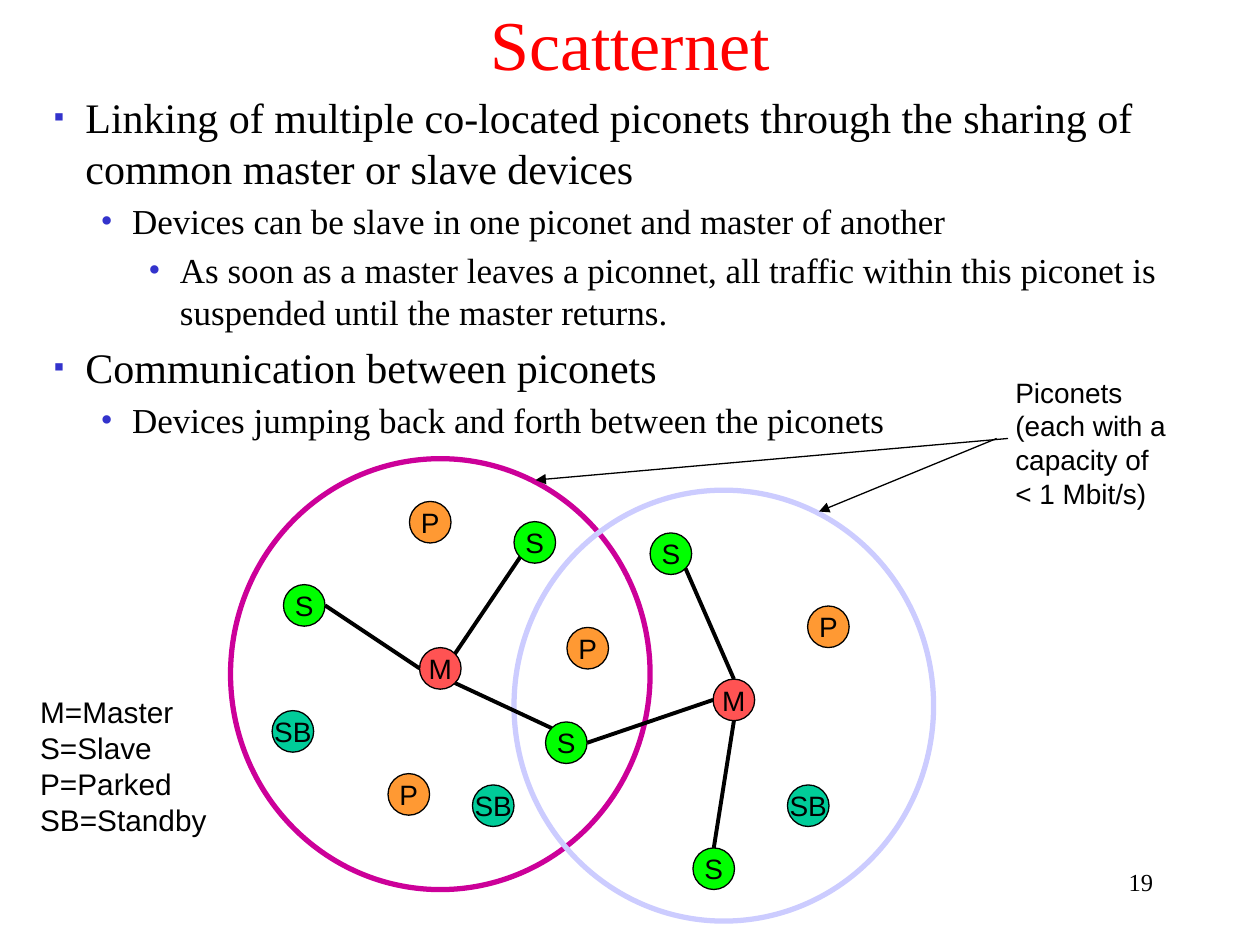
from dataclasses import dataclass

from pptx import Presentation
from pptx.dml.color import RGBColor
from pptx.enum.shapes import MSO_CONNECTOR, MSO_SHAPE
from pptx.enum.text import MSO_ANCHOR, PP_ALIGN
from pptx.oxml.ns import qn
from pptx.util import Inches, Pt
from lxml import etree

OVAL = MSO_SHAPE.OVAL
STRAIGHT = MSO_CONNECTOR.STRAIGHT
TOP, MIDDLE = MSO_ANCHOR.TOP, MSO_ANCHOR.MIDDLE
LEFT, CENTER, RIGHT = PP_ALIGN.LEFT, PP_ALIGN.CENTER, PP_ALIGN.RIGHT


@dataclass(frozen=True)
class Theme:
    serif: str = "Times New Roman"
    sans: str = "Arial"
    ink: str = "000000"
    title: str = "FF0000"
    bullet: str = "3333CC"
    first_piconet: str = "CC0099"
    second_piconet: str = "CCCCFF"
    master: str = "FF5353"
    slave: str = "00FF00"
    parked: str = "FF9933"
    standby: str = "00CC99"
    title_size: int = 40
    point_size: int = 24
    subpoint_size: int = 20
    legend_size: int = 17
    label_size: int = 16
    number_size: int = 14


THEME = Theme()
DEVICE_FILLS = {"M": THEME.master, "S": THEME.slave,
                "P": THEME.parked, "SB": THEME.standby}
DEVICE_SIZE = 0.33
DIAGONAL = 0.7
SITES = {
    "top": (0, -1), "bottom": (0, 1), "left": (-1, 0), "right": (1, 0),
    "top left": (-DIAGONAL, -DIAGONAL), "top right": (DIAGONAL, -DIAGONAL),
    "bottom left": (-DIAGONAL, DIAGONAL), "bottom right": (DIAGONAL, DIAGONAL),
}

POINTS = [
    (0, "Linking of multiple co-located piconets through the sharing of "
        "common master or slave devices"),
    (1, "Devices can be slave in one piconet and master of another"),
    (2, "As soon as a master leaves a piconnet, all traffic within this "
        "piconet is suspended until the master returns."),
    (0, "Communication between piconets"),
    (1, "Devices jumping back and forth between the piconets"),
]
LEVELS = [("▪", 70, 0.25, THEME.point_size),
          ("•", 100, 0.62, THEME.subpoint_size),
          ("•", 100, 1, THEME.subpoint_size)]

DEVICES = {
    "left master": ("M", 3.33, 5.14),
    "west slave": ("S", 2.25, 4.64),
    "north slave": ("S", 4.08, 4.14),
    "shared slave": ("S", 4.33, 5.73),
    "left parked": ("P", 3.08, 6.14),
    "top parked": ("P", 3.25, 3.98),
    "shared parked": ("P", 4.5, 4.98),
    "left standby": ("SB", 2.16, 5.64),
    "lower standby": ("SB", 3.75, 6.23),
    "right master": ("M", 5.66, 5.39),
    "upper slave": ("S", 5.16, 4.23),
    "lower slave": ("S", 5.5, 6.73),
    "right parked": ("P", 6.41, 4.81),
    "right standby": ("SB", 6.25, 6.23),
}
LINKS = [
    ("left master", "left", "west slave", "right"),
    ("left master", "top right", "north slave", "bottom left"),
    ("shared slave", "top left", "left master", "bottom right"),
    ("right master", "top", "upper slave", "bottom right"),
    ("right master", "left", "shared slave", "right"),
    ("right master", "bottom", "lower slave", "top"),
]


class SlideBuilder:
    def __init__(self, page, theme):
        self.page = page
        self.theme = theme

    def color(self, value):
        return RGBColor.from_string(value)

    def style(self, para, size, font, color=None, align=LEFT):
        para.alignment = align
        para.font.size = Pt(size)
        para.font.name = font
        para.font.color.rgb = self.color(color or self.theme.ink)

    def text(self, place, lines, size, font, color=None, align=LEFT,
             anchor=TOP, wrap=True):
        box = self.page.shapes.add_textbox(*map(Inches, place))
        frame = box.text_frame
        frame.word_wrap = wrap
        frame.vertical_anchor = anchor
        frame.text = "\n".join(lines)
        for para in frame.paragraphs:
            self.style(para, size, font, color, align)
        return box

    def bullets(self, place, points):
        lines = [line for _, line in points]
        box = self.text(place, lines, self.theme.point_size, self.theme.serif)
        for para, (level, _) in zip(box.text_frame.paragraphs, points):
            mark, percent, indent, size = LEVELS[level]
            para.level = level
            para.font.size = Pt(size)
            para.space_before = Pt(size * 0.2)
            properties = para._p.get_or_add_pPr()
            properties.set("marL", str(Inches(indent)))
            properties.set("indent", str(Inches(-0.25)))
            tint = etree.Element(qn("a:buClr"))
            etree.SubElement(tint, qn("a:srgbClr"), val=self.theme.bullet)
            scale = etree.Element(qn("a:buSzPct"), val=str(percent * 1000))
            face = etree.Element(qn("a:buFont"), typeface=self.theme.serif)
            symbol = etree.Element(qn("a:buChar"), char=mark)
            spacing = properties.find(qn("a:spcBef"))
            for element in (symbol, face, scale, tint):
                spacing.addnext(element)

    def oval(self, place, line, width, fill=None):
        shape = self.page.shapes.add_shape(OVAL, *map(Inches, place))
        shape.shadow.inherit = False
        if fill:
            shape.fill.solid()
            shape.fill.fore_color.rgb = self.color(fill)
        else:
            shape.fill.background()
        shape.line.color.rgb = self.color(line)
        shape.line.width = Pt(width)
        return shape

    def device(self, kind, left, top):
        shape = self.oval((left, top, DEVICE_SIZE, DEVICE_SIZE),
                          self.theme.ink, 0.75, DEVICE_FILLS[kind])
        frame = shape.text_frame
        frame.word_wrap = False
        frame.vertical_anchor = MIDDLE
        frame.text = kind
        self.style(frame.paragraphs[0], self.theme.label_size,
                   self.theme.sans, align=CENTER)

    def line(self, start, end, width, arrow=False):
        connector = self.page.shapes.add_connector(
            STRAIGHT, *map(Inches, start + end))
        connector.line.color.rgb = self.color(self.theme.ink)
        connector.line.width = Pt(width)
        if arrow:
            outline = connector.line._get_or_add_ln()
            etree.SubElement(outline, qn("a:tailEnd"), type="triangle")
        etree.SubElement(connector._element.spPr, qn("a:effectLst"))


def site_point(name, site):
    _, left, top = DEVICES[name]
    across, down = SITES[site]
    radius = DEVICE_SIZE / 2
    return left + radius * (1 + across), top + radius * (1 + down)


def main():
    deck = Presentation()
    deck.slide_width, deck.slide_height = Inches(10), Inches(7.5)
    page = deck.slides.add_slide(deck.slide_layouts[6])
    builder = SlideBuilder(page, THEME)

    builder.text((7.17, 6.83, 2.08, 0.5), ["19"], THEME.number_size,
                 THEME.serif, align=RIGHT)
    builder.oval((1.83, 3.64, 3.33, 3.42), THEME.first_piconet, 3)
    builder.oval((4.08, 3.89, 3.33, 3.42), THEME.second_piconet, 3)
    builder.text((0, 0, 10, 0.68), ["Scatternet"], THEME.title_size,
                 THEME.serif, THEME.title, CENTER, MIDDLE)
    builder.bullets((0.33, 0.68, 9.33, 6.54), POINTS)
    builder.text((0.22, 5.46, 1.54, 1.24),
                 ["M=Master", "S=Slave", "P=Parked", "SB=Standby"],
                 THEME.legend_size, THEME.sans, wrap=False)
    for device in DEVICES.values():
        builder.device(*device)
    for first, first_site, second, second_site in LINKS:
        builder.line(site_point(first, first_site),
                     site_point(second, second_site), 2.25)
    builder.text((7.96, 2.93, 1.46, 1.17),
                 ["Piconets", "(each with a", "capacity of", "< 1 Mbit/s)"],
                 THEME.label_size, THEME.sans, wrap=False)
    builder.line((8, 3.48), (4.25, 3.81), 0.75, arrow=True)
    builder.line((7.91, 3.48), (6.5, 4.06), 0.75, arrow=True)

    deck.save("out.pptx")


if __name__ == "__main__":
    main()
